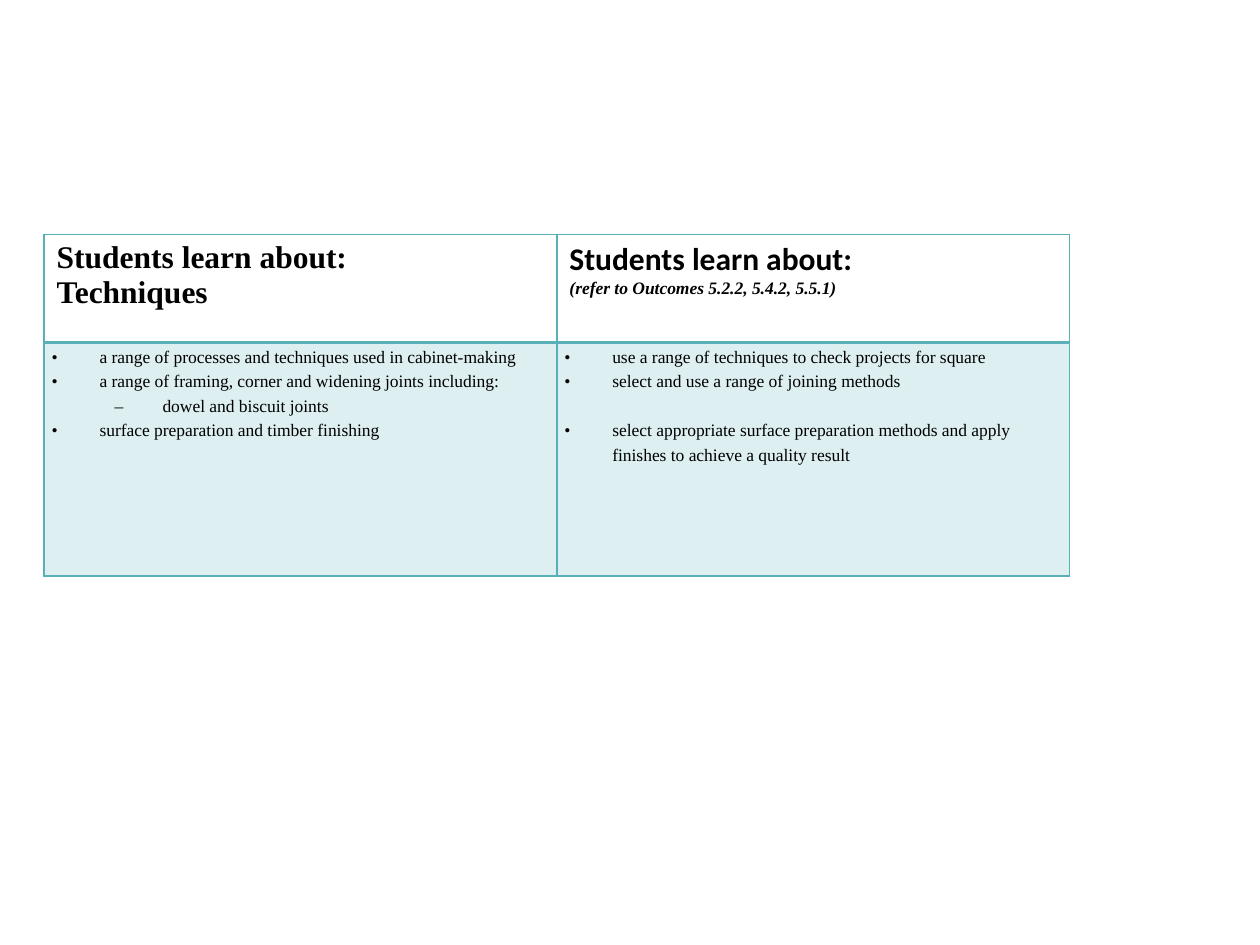
"""Build a slide with a two-column table of course content and learning outcomes."""
from lxml import etree
from pptx import Presentation
from pptx.dml.color import RGBColor
from pptx.oxml import ns
from pptx.util import Inches, Pt

BLACK = RGBColor(0x00, 0x00, 0x00)
TEAL = RGBColor(0x59, 0xB0, 0xB9)
SERIF = "Times New Roman"

HEADINGS = [
    [("Students learn about:", SERIF, 18, False), ("Techniques", SERIF, 18, False)],
    [("Students learn about:", "Calibri", 18, False),
     ("(refer to Outcomes 5.2.2, 5.4.2, 5.5.1)", SERIF, 10, True)],
]
TOPICS = [
    [("a range of processes and techniques used in cabinet-making", 0, 0),
     ("a range of framing, corner and widening joints including:", 0, 0),
     ("dowel and biscuit joints", 1, 0),
     ("surface preparation and timber finishing", 0, 0)],
    [("use a range of techniques to check projects for square", 0, 0),
     ("select and use a range of joining methods", 0, 0),
     ("select appropriate surface preparation methods and apply "
      "finishes to achieve a quality result", 0, 14)],
]


def add_borders(cell, bottom_width):
    properties = cell._tc.get_or_add_tcPr()
    for side, width in zip("LRTB", (1, 1, 1, bottom_width)):
        line = etree.SubElement(properties, ns.qn(f"a:ln{side}"), w=str(Pt(width)))
        fill = etree.SubElement(line, ns.qn("a:solidFill"))
        etree.SubElement(fill, ns.qn("a:srgbClr"), val=str(TEAL))


def add_bullet(paragraph, level):
    properties = paragraph._p.get_or_add_pPr()
    properties.set("marL", str(Inches(0.38 + 0.5 * level)))
    properties.set("indent", str(Inches(-0.38)))
    etree.SubElement(properties, ns.qn("a:buFont"), typeface=SERIF)
    etree.SubElement(properties, ns.qn("a:buChar"), char="•–"[level])
    tabs = etree.SubElement(properties, ns.qn("a:tabLst"))
    for stop in (0.25, 0.5)[:level + 1]:
        etree.SubElement(tabs, ns.qn("a:tab"), pos=str(Inches(stop)), algn="l")


presentation = Presentation()
presentation.slide_width = Inches(10)
presentation.slide_height = Inches(7.5)
slide = presentation.slides.add_slide(presentation.slide_layouts[6])

table = slide.shapes.add_table(
    2, 2, Inches(0.35), Inches(1.86), Inches(8.14), Inches(2.71)).table
table.first_row = False
table.horz_banding = False
table.rows[0].height = Inches(0.86)
table.rows[1].height = Inches(1.85)

for column, (heading, topics) in enumerate(zip(HEADINGS, TOPICS)):
    table.columns[column].width = Inches(4.07)

    cell = table.cell(0, column)
    add_borders(cell, 2)
    cell.fill.background()
    cell.text = "\n".join(line[0] for line in heading)
    for paragraph, (_, name, size, italic) in zip(cell.text_frame.paragraphs, heading):
        paragraph.font.name = name
        paragraph.font.size = Pt(size)
        paragraph.font.bold = True
        paragraph.font.italic = italic
        paragraph.font.color.rgb = BLACK

    cell = table.cell(1, column)
    add_borders(cell, 1)
    cell.fill.solid()
    cell.fill.fore_color.rgb = TEAL
    color = cell._tc.tcPr.find(ns.qn("a:solidFill")).find(ns.qn("a:srgbClr"))
    etree.SubElement(color, ns.qn("a:alpha"), val="20000")
    cell.margin_left = cell.margin_right = Inches(0.06)
    cell.margin_top = cell.margin_bottom = 0
    cell.text = "\n".join(topic[0] for topic in topics)
    for paragraph, (_, level, gap) in zip(cell.text_frame.paragraphs, topics):
        add_bullet(paragraph, level)
        paragraph.level = level
        paragraph.line_spacing = Pt(14)
        if gap:
            paragraph.space_before = Pt(gap)
        paragraph.font.name = SERIF
        paragraph.font.size = Pt(10)
        paragraph.font.bold = False
        paragraph.font.color.rgb = BLACK

presentation.save("out.pptx")
